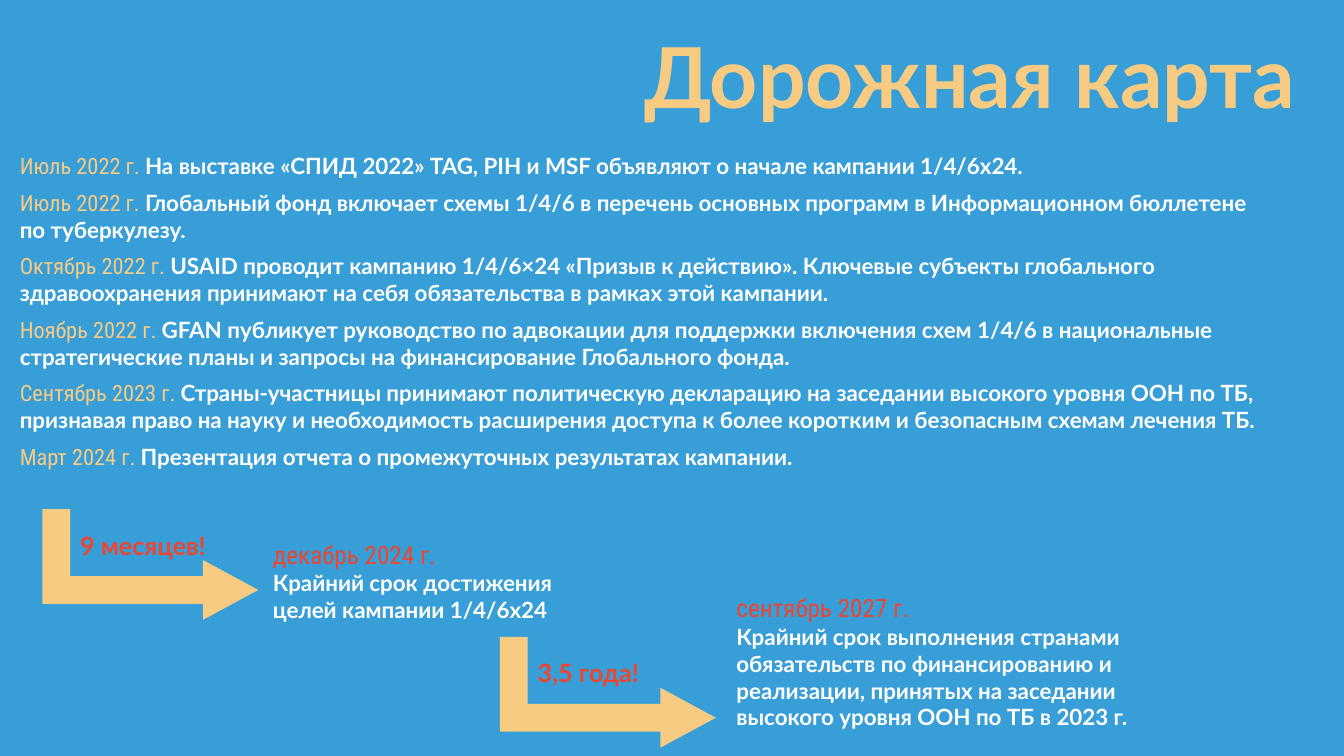
from dataclasses import dataclass

from pptx import Presentation
from pptx.dml.color import RGBColor
from pptx.enum import shapes, text
from pptx.util import Cm, Pt


@dataclass(frozen=True)
class Theme:
    """Colours, fonts and type sizes of the slide."""
    blue: str = "389ED7"
    sand: str = "F8CB83"
    red: str = "ED452F"
    white: str = "FFFFFF"
    main_font: str = "Lato"
    date_font: str = "Roboto Condensed"
    title_size: int = 60
    date_size: int = 18
    body_size: int = 16


THEME = Theme()

EVENTS = [
    ("Июль 2022 г. ", "На выставке «СПИД 2022» TAG, PIH и MSF объявляют о начале кампании 1/4/6x24."),
    ("Июль 2022 г. ", "Глобальный фонд включает схемы 1/4/6 в перечень основных программ "
     "в Информационном бюллетене по туберкулезу."),
    ("Октябрь 2022 г. ", "USAID проводит кампанию 1/4/6×24 «Призыв к действию». Ключевые субъекты "
     "глобального здравоохранения принимают на себя обязательства в рамках этой кампании."),
    ("Ноябрь 2022 г. ", "GFAN публикует руководство по адвокации для поддержки включения схем 1/4/6 "
     "в национальные стратегические планы и запросы на финансирование Глобального фонда."),
    ("Сентябрь 2023 г. ", "Страны-участницы принимают политическую декларацию на заседании высокого "
     "уровня ООН по ТБ, признавая право на науку и необходимость расширения доступа к более коротким "
     "и безопасным схемам лечения ТБ."),
    ("Март 2024 г. ", "Презентация отчета о промежуточных результатах кампании."),
]

MILESTONES = [
    dict(left=1.07, top=12.83, wait="9 месяцев!", date="декабрь 2024 г.",
         goal="Крайний срок достижения целей кампании 1/4/6x24",
         goal_box=(5.56, 0.63, 7.87, 2.39)),
    dict(left=12.6, top=16.05, wait="3,5 года!", date="сентябрь 2027 г.",
         goal="Крайний срок выполнения странами обязательств по финансированию и реализации, "
              "принятых на заседании высокого уровня ООН по ТБ в 2023 г.",
         goal_box=(5.71, -1.24, 11.73, 3.76)),
]


def run(content, size=THEME.body_size, font=THEME.main_font, color=THEME.white, bold=True):
    """Describe a run of text and its format."""
    return content, size, font, color, bold


def add_text(slide, box, paragraphs, align=text.PP_ALIGN.LEFT, anchor=text.MSO_ANCHOR.TOP,
             space_after=0, line_spacing=1.0):
    """Add a text box made of paragraphs, each a list of runs."""
    frame = slide.shapes.add_textbox(*map(Cm, box)).text_frame
    frame.word_wrap = True
    frame.vertical_anchor = anchor
    for index, runs in enumerate(paragraphs):
        paragraph = frame.add_paragraph() if index else frame.paragraphs[0]
        paragraph.alignment = align
        paragraph.space_after = Pt(space_after)
        paragraph.line_spacing = line_spacing
        for content, size, font, color, bold in runs:
            piece = paragraph.add_run()
            piece.text = content
            piece.font.size = Pt(size)
            piece.font.name = font
            piece.font.bold = bold
            piece.font.color.rgb = RGBColor.from_string(color)


def add_filled_shape(slide, kind, box, color):
    """Add a flat preset shape without outline."""
    shape = slide.shapes.add_shape(kind, *map(Cm, box))
    shape.shadow.inherit = False
    shape.fill.solid()
    shape.fill.fore_color.rgb = RGBColor.from_string(color)
    shape.line.fill.background()
    return shape


def add_title(slide, box):
    """Place the slide title at the right of its box."""
    title = run("Дорожная карта", size=THEME.title_size, color=THEME.sand)
    add_text(slide, box, [[title]], align=text.PP_ALIGN.RIGHT,
             anchor=text.MSO_ANCHOR.MIDDLE, line_spacing=0.9)


def add_events(slide, box):
    """List the dated events of the campaign."""
    paragraphs = [[run(date, font=THEME.date_font, color=THEME.sand, bold=False), run(event)]
                  for date, event in EVENTS]
    add_text(slide, box, paragraphs, space_after=7)


def add_milestone(slide, left, top, wait, date, goal, goal_box):
    """Draw a bent arrow with its waiting time and the deadline it leads to."""
    width, height = 5.44, 2.79
    shift = (width - height) / 2
    arrow = add_filled_shape(slide, shapes.MSO_SHAPE.BENT_UP_ARROW,
                             (left + shift, top - shift, height, width), THEME.sand)
    arrow.rotation = 90
    for index, value in enumerate((0.25, 0.27, 0.5)):
        arrow.adjustments[index] = value
    add_text(slide, (left + 0.7, top + 0.4, 4.01, 1.02),
             [[run(wait, size=THEME.date_size, color=THEME.red)]])
    x, y, goal_width, goal_height = goal_box
    add_text(slide, (left + x, top + y, goal_width, goal_height),
             [[run(date, size=THEME.date_size, font=THEME.date_font, color=THEME.red, bold=False)],
              [run(goal)]])


def main():
    """Build the road map slide and save it."""
    presentation = Presentation()
    presentation.slide_width, presentation.slide_height = Cm(33.87), Cm(19.05)
    slide = presentation.slides.add_slide(presentation.slide_layouts[6])
    add_filled_shape(slide, shapes.MSO_SHAPE.RECTANGLE, (0, 0, 33.87, 19.05), THEME.blue)
    add_title(slide, (7.67, 0.2, 25.22, 3.68))
    add_events(slide, (0.25, 3.71, 31.7, 9.02))
    for milestone in MILESTONES:
        add_milestone(slide, **milestone)
    presentation.save("out.pptx")


if __name__ == "__main__":
    main()
